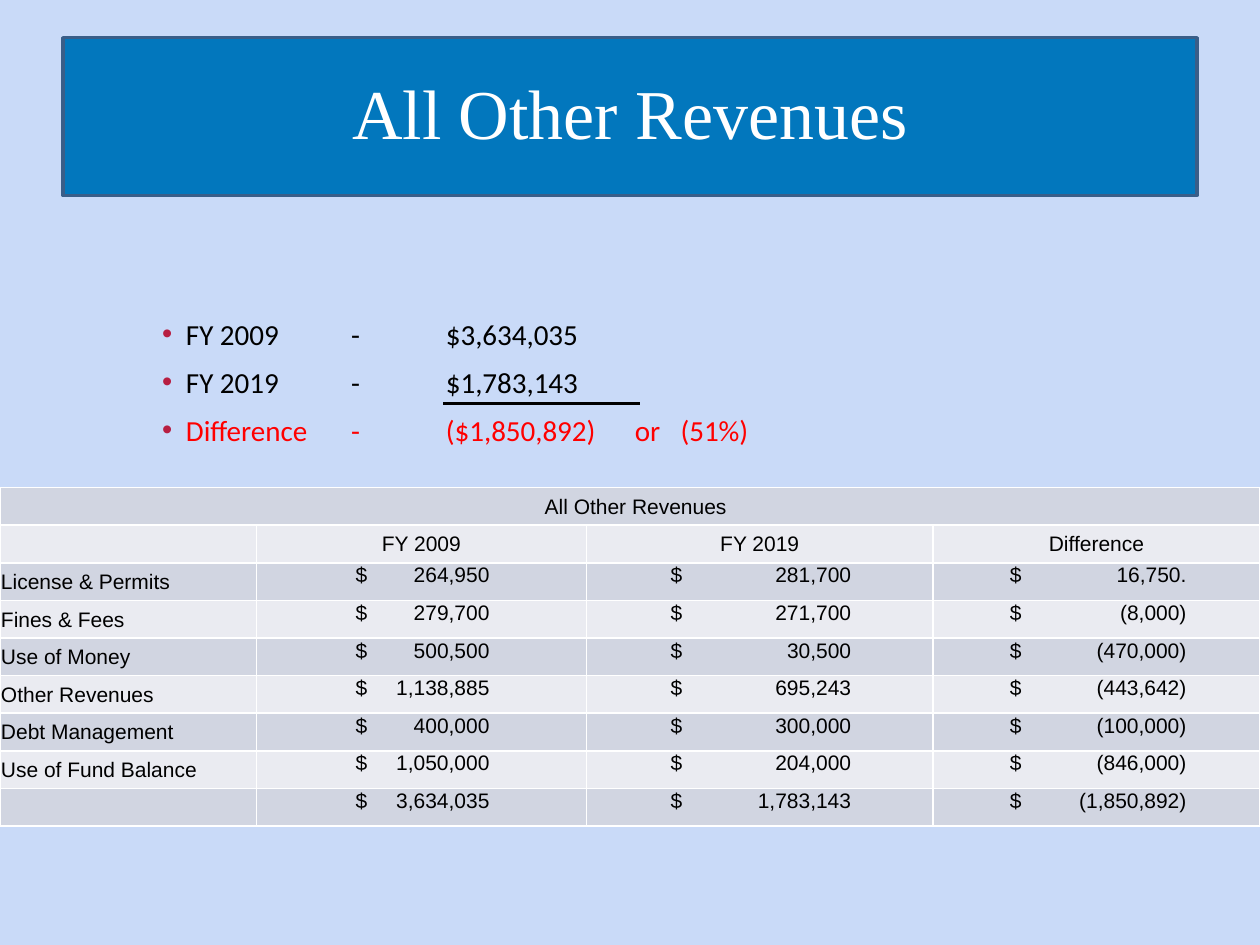
import pptx
import pptx.util
import pptx.dml.color
import pptx.enum.shapes
import pptx.enum.text
import pptx.oxml
import pptx.oxml.ns
from lxml import etree

Cm, Pt = pptx.util.Cm, pptx.util.Pt
ALIGN = pptx.enum.text.PP_ALIGN
ANCHOR = pptx.enum.text.MSO_ANCHOR
BANDS = ("D1D5E1", "EAEBF1")

HEADERS = ["", "FY 2009", "FY 2019", "Difference"]
REVENUES = [
    ("License & Permits", "264,950", "281,700", "16,750."),
    ("Fines & Fees", "279,700", "271,700", "(8,000)"),
    ("Use of Money", "500,500", "30,500", "(470,000)"),
    ("Other Revenues", "1,138,885", "695,243", "(443,642)"),
    ("Debt Management", "400,000", "300,000", "(100,000)"),
    ("Use of Fund Balance", "1,050,000", "204,000", "(846,000)"),
    ("", "3,634,035", "1,783,143", "(1,850,892)"),
]
COL_WIDTHS = (5.17, 6.65, 6.99, 6.59)
# Per amount column: dollar sign offset, then right tab for the figure
AMOUNT_STOPS = ((2.0, 2.7), (1.7, 3.64), (1.55, 3.56))


def rgb(color):
    return pptx.dml.color.RGBColor.from_string(color)


def style(p, font, size, color):
    for r in p.runs:
        r.font.name = font
        r.font.size = Pt(size)
        r.font.color.rgb = rgb(color)


def sub(parent, tag, **attrs):
    return etree.SubElement(parent, pptx.oxml.ns.qn(tag), attrs)


def add_tabs(p, stops, align="l"):
    tabs = sub(p._p.get_or_add_pPr(), "a:tabLst")
    for stop in stops:
        sub(tabs, "a:tab", pos=str(Cm(stop)), algn=align)


def add_bullet(p, color, indent):
    pPr = p._p.get_or_add_pPr()
    pPr.set("marL", str(Cm(indent)))
    pPr.set("indent", str(-Cm(indent)))
    sub(sub(pPr, "a:buClr"), "a:srgbClr", val=color)
    sub(pPr, "a:buFont", typeface="Arial")
    sub(pPr, "a:buChar", char="•")


def add_title(s, left, top, width, height):
    sp = s.shapes.add_shape(pptx.enum.shapes.MSO_SHAPE.RECTANGLE,
                            Cm(left), Cm(top), Cm(width), Cm(height))
    sp.shadow.inherit = False
    sp.fill.solid()
    sp.fill.fore_color.rgb = rgb("0277BD")
    sp.line.color.rgb = rgb("395E89")
    sp.line.width = Pt(2)
    tf = sp.text_frame
    tf.word_wrap = True
    tf.vertical_anchor = ANCHOR.MIDDLE
    p = tf.paragraphs[0]
    p.text = "All Other Revenues"
    p.alignment = ALIGN.CENTER
    p.line_spacing = 0.9
    style(p, "Times New Roman", 40, "FFFFFF")


def add_summary(s, left, top, width, height):
    tf = s.shapes.add_textbox(Cm(left), Cm(top), Cm(width), Cm(height)).text_frame
    tf.word_wrap = True
    lines = [("FY 2009\t-\t$3,634,035", "000000"),
             ("FY 2019\t-\t$1,783,143", "000000"),
             ("Difference\t-\t($1,850,892)\tor\t(51%)", "FF0000")]
    for i, (text, color) in enumerate(lines):
        p = tf.add_paragraph() if i else tf.paragraphs[0]
        p.text = text
        if i:
            p.space_before = Pt(7.5)
        add_bullet(p, "B71E42", 0.48)
        add_tabs(p, (3.81, 5.72, 9.53, 10.45))
        style(p, "Calibri", 16.6, color)

    # Rule under the amounts, above the difference
    y = Cm(top + 1.88)
    rule = s.shapes.add_connector(pptx.enum.shapes.MSO_CONNECTOR.STRAIGHT,
                                  Cm(left + 5.92), y, Cm(left + 9.88), y)
    rule.line.color.rgb = rgb("000000")
    rule.line.width = Pt(1.75)
    sub(rule._element.spPr, "a:effectLst")


def format_cell(cell, fill):
    cell.margin_left = cell.margin_right = cell.margin_top = Cm(0.02)
    cell.margin_bottom = 0
    tcPr = cell._tc.get_or_add_tcPr()
    for side in ("a:lnL", "a:lnR", "a:lnT", "a:lnB"):
        line = sub(tcPr, side, w=str(Pt(1)))
        sub(sub(line, "a:solidFill"), "a:srgbClr", val="FFFFFF")
    cell.fill.solid()
    cell.fill.fore_color.rgb = rgb(fill)


def set_cell(cell, text, align=ALIGN.LEFT, anchor=ANCHOR.MIDDLE):
    cell.vertical_anchor = anchor
    p = cell.text_frame.paragraphs[0]
    p.text = text
    p.alignment = align
    p.font.size = Pt(12)
    style(p, "Arial", 12, "000000")
    return p


def add_revenue_table(s, left, top, width, height):
    n_rows = len(REVENUES) + 2
    table = s.shapes.add_table(n_rows, len(COL_WIDTHS), Cm(left), Cm(top),
                               Cm(width), Cm(height)).table
    for col, col_width in zip(table.columns, COL_WIDTHS):
        col.width = Cm(col_width)
    for i, row in enumerate(table.rows):
        row.height = Cm(height / n_rows)
        for cell in row.cells:
            format_cell(cell, BANDS[i % 2])

    # Heading rows
    table.cell(0, 0).merge(table.cell(0, len(COL_WIDTHS) - 1))
    set_cell(table.cell(0, 0), "All Other Revenues", ALIGN.CENTER)
    table.cell(0, 0).margin_left = Cm(0.25)
    for j, header in enumerate(HEADERS):
        set_cell(table.cell(1, j), header, ALIGN.CENTER)

    # Labels and amounts
    for i, (label, *amounts) in enumerate(REVENUES, start=2):
        set_cell(table.cell(i, 0), label)
        for j, (amount, (offset, stop)) in enumerate(zip(amounts, AMOUNT_STOPS), start=1):
            cell = table.cell(i, j)
            cell.margin_left = Cm(offset)
            p = set_cell(cell, f"$\t{amount}", anchor=ANCHOR.TOP)
            pPr = p._p.get_or_add_pPr()
            add_tabs(p, (stop,), "r")
            pPr.insert(0, pPr[-1])


def main():
    prs = pptx.Presentation()
    prs.slide_width, prs.slide_height = Cm(25.4), Cm(19.05)
    s = prs.slides.add_slide(prs.slide_layouts[6])
    s.background.fill.solid()
    s.background.fill.fore_color.rgb = rgb("C9DAF8")
    add_summary(s, 3.02, 6.25, 20.02, 3.0)
    add_revenue_table(s, 0, 9.83, 25.4, 6.83)
    add_title(s, 1.27, 0.76, 22.86, 3.18)
    prs.save("out.pptx")


if __name__ == "__main__":
    main()
